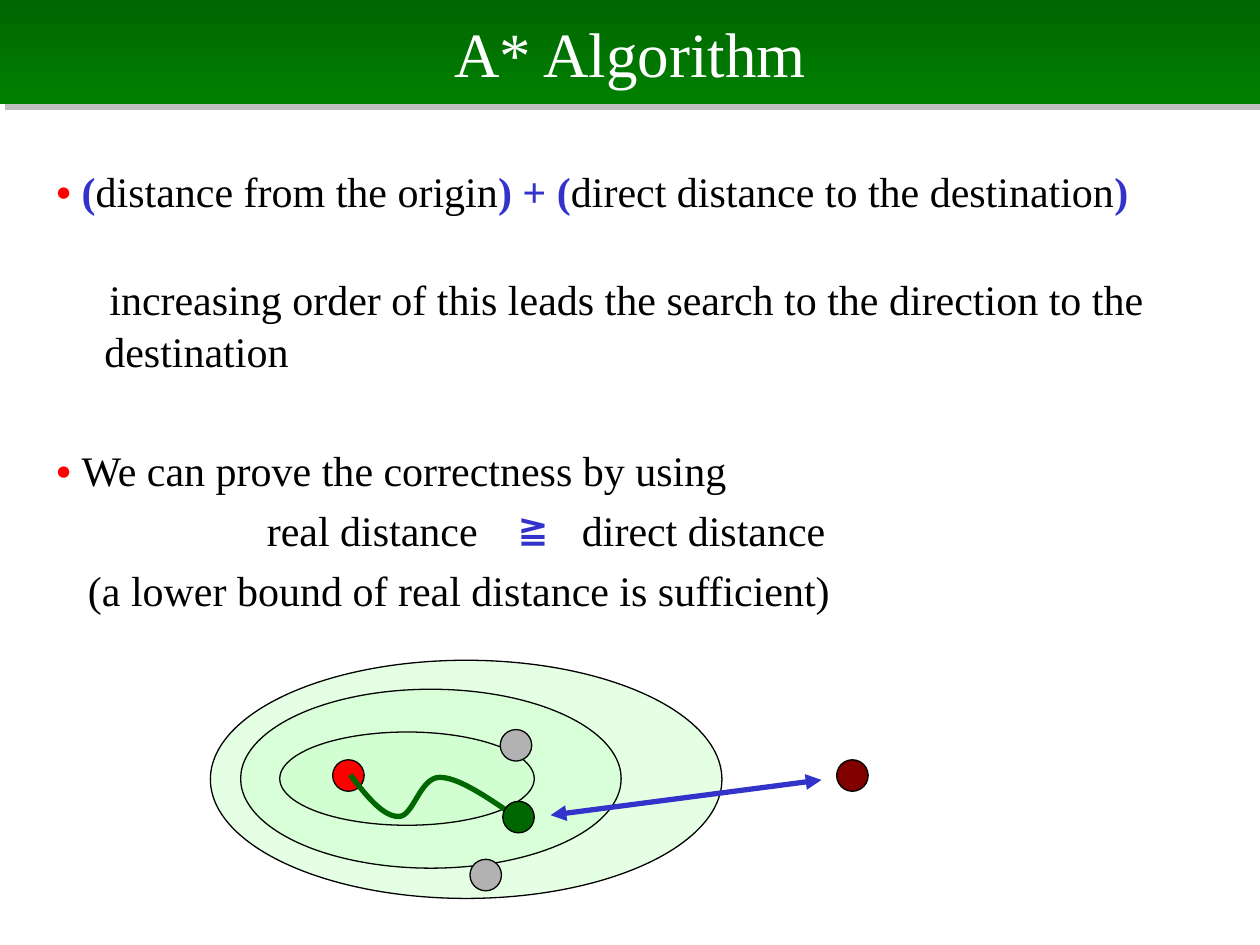
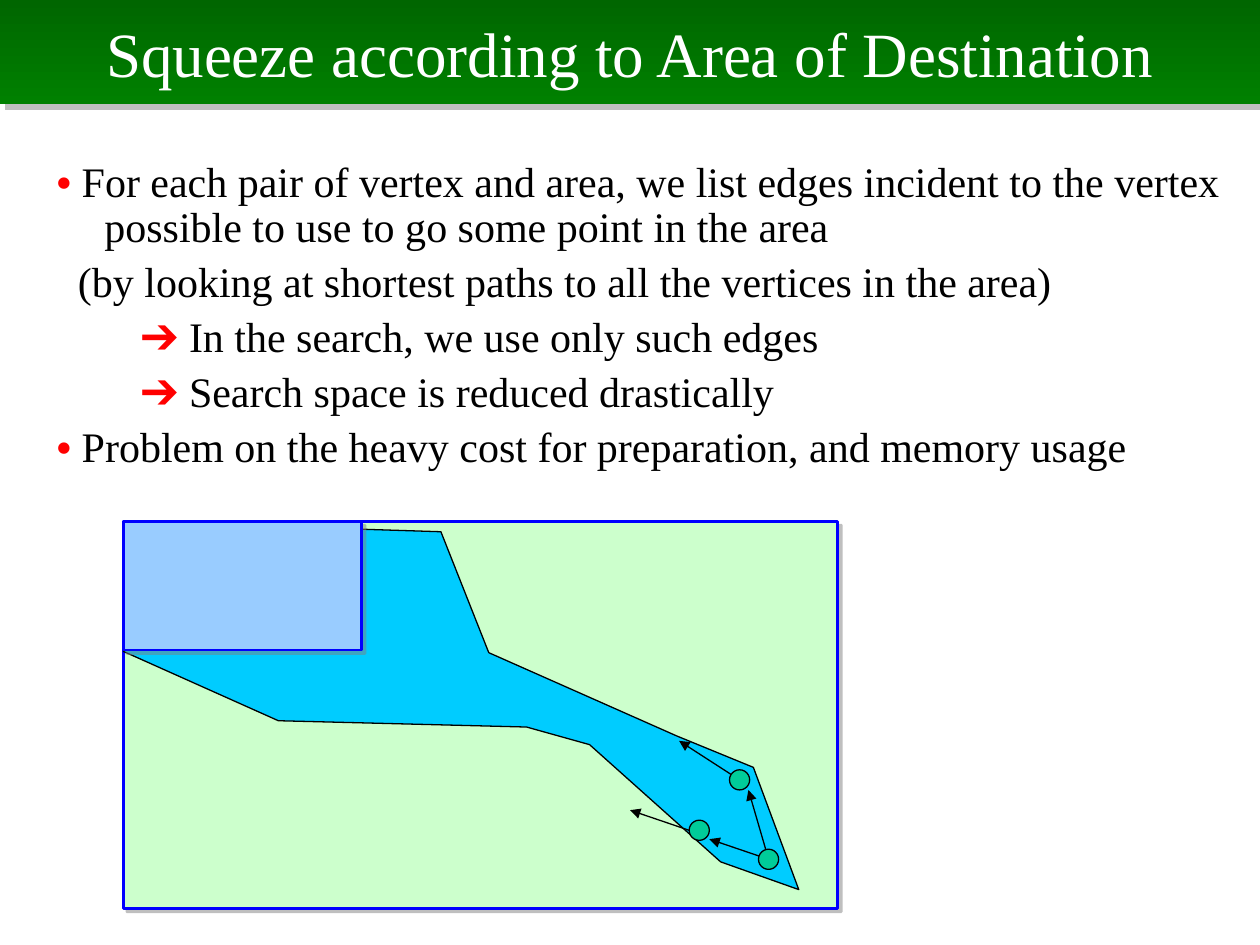
"""Build two slides on speeding up shortest path search."""
from dataclasses import dataclass

from lxml.etree import SubElement
from pptx import Presentation
from pptx.dml.color import RGBColor
from pptx.enum.shapes import MSO_CONNECTOR, MSO_SHAPE
from pptx.enum.text import MSO_ANCHOR, PP_ALIGN
from pptx.oxml.ns import qn
from pptx.util import Inches, Pt


@dataclass(frozen=True)
class Theme:
    font: str = "Times New Roman"
    title_size: float = 36
    body_size: float = 24
    thin: float = 0.75
    medium: float = 1.5
    thick: float = 3
    band_top: str = "006600"
    band_bottom: str = "008000"
    title: str = "FFFFFF"
    text: str = "000000"
    marker: str = "FF0000"
    accent: str = "3333CC"
    outline: str = "000000"
    frame: str = "0000FF"
    shadow: str = "808080"
    field: str = "CCFFCC"
    origin: str = "FF0000"
    destination: str = "800000"
    visited: str = "006600"
    waiting: str = "B2B2B2"
    corridor: str = "00CCFF"
    area: str = "99CCFF"
    vertex: str = "00CC99"


THEME = Theme()
SLIDE_SIZE = (10, 7.5)
BAND_HEIGHT = 0.83
HANG = 0.38
GAP = 5.5

ASTAR_TITLE = "A* Algorithm"
ASTAR_BODY_BOX = (0.35, 1.31, 8.9, 3.6)
ASTAR_BODY = [
    {"runs": [("• ", "marker"), ("(", "accent"), ("distance from the origin", "text"),
              (") + (", "accent"), ("direct distance to the destination", "text"),
              (")", "accent")], "spacing": 0.9},
    {"runs": [("increasing order of this leads the search to the direction to the destination",
               "text")], "first": 0.04, "before": 31.5, "spacing": 1.03},
    {"runs": [("• ", "marker"), ("We can prove the correctness by using", "text")],
     "before": 39.5},
    {"runs": [("real distance\t", "text"), ("≧\t", "accent"), ("direct distance", "text")],
     "left": 1.67, "first": 0, "tabs": (3.83, 4.58)},
    {"runs": [("(a lower bound of real distance is sufficient)", "text")],
     "left": 0.25, "first": 0},
]
SEARCH_RINGS = [(1.67, 5.24, 4.06, 1.89), (1.91, 5.47, 3.02, 1.42), (2.22, 5.81, 2.02, 0.74)]
ROUTE_START = (2.78, 6.15)
ROUTE_CURVE = [(2.91, 6.32), (3.04, 6.48), (3.16, 6.48),
               (3.28, 6.49), (3.33, 6.17), (3.49, 6.17),
               (3.64, 6.17), (3.87, 6.33), (4.09, 6.48)]
DIRECT_DISTANCE = ((4.37, 6.47), (6.52, 6.19))
NODE_SIZE = 0.25
END_NODES = [(2.64, 6.03, THEME.origin), (6.64, 6.03, THEME.destination)]
FRONT_NODES = [(3.99, 6.36, THEME.visited), (3.97, 5.79, THEME.waiting),
               (3.73, 6.82, THEME.waiting)]

SQUEEZE_TITLE = "Squeeze according to Area of Destination"
SQUEEZE_BODY_BOX = (0.35, 1.23, 9.45, 2.8)
SQUEEZE_BODY = [
    {"runs": [("• ", "marker"),
              ("For each pair of vertex and area, we list edges incident to the vertex "
               "possible to use to go some point in the area", "text")]},
    {"runs": [("(by looking at shortest paths to all the vertices in the area)", "text")],
     "left": 0.17, "first": 0},
    {"runs": [("➔ ", "marker"), ("In the search, we use only such edges", "text")],
     "left": 0.67, "first": 0},
    {"runs": [("➔ ", "marker"), ("Search space is reduced drastically", "text")],
     "left": 0.67, "first": 0},
    {"runs": [("• ", "marker"),
              ("Problem on the heavy cost for preparation, and memory usage", "text")]},
]
MAP_BOX = (0.98, 4.14, 5.67, 3.07)
AREA_BOX = (0.98, 4.14, 1.89, 1.02)
CORRIDOR = [(6.34, 7.06), (5.98, 6.09), (5.37, 5.84), (3.88, 5.18), (3.5, 4.22), (0.98, 4.14),
            (0.98, 5.17), (2.21, 5.72), (4.18, 5.77), (4.68, 5.91), (5.72, 6.84)]
EDGES = [((6.1, 6.82), (5.94, 6.27)), ((6.1, 6.82), (5.63, 6.66)),
         ((5.87, 6.19), (5.39, 5.88)), ((5.47, 6.59), (5, 6.43))]
VERTEX_SIZE = 0.16
VERTICES = [(6.02, 6.74), (5.79, 6.11), (5.47, 6.51)]


def color(value):
    return RGBColor.from_string(value)


def points(pairs):
    return [(Inches(x), Inches(y)) for x, y in pairs]


def set_line(shape, line_color, width):
    shape.line.color.rgb = color(line_color)
    shape.line.width = Pt(width)


def add_shadow(shape, distance):
    shape.shadow.inherit = False
    effects = shape._element.spPr.find(qn("a:effectLst"))
    shadow = SubElement(effects, qn("a:outerShdw"), dist=str(Pt(distance)), dir="2700000",
                        algn="ctr", rotWithShape="0")
    tint = SubElement(shadow, qn("a:srgbClr"), val=THEME.shadow)
    SubElement(tint, qn("a:alpha"), val="50000")


def add_preset(slide, kind, box, fill, line_color=THEME.outline, width=THEME.thin):
    shape = slide.shapes.add_shape(kind, *map(Inches, box))
    shape.shadow.inherit = False
    shape.fill.solid()
    shape.fill.fore_color.rgb = color(fill)
    set_line(shape, line_color, width)
    return shape


def add_dot(slide, left, top, size, fill):
    add_preset(slide, MSO_SHAPE.OVAL, (left, top, size, size), fill)


def add_panel(slide, box, fill):
    panel = add_preset(slide, MSO_SHAPE.RECTANGLE, box, fill, THEME.frame, THEME.medium)
    add_shadow(panel, 2.8)


def add_arrow(slide, start, end, line_color, width, ends=("tailEnd",)):
    (start_x, start_y), (end_x, end_y) = points((start, end))
    arrow = slide.shapes.add_connector(MSO_CONNECTOR.STRAIGHT, start_x, start_y, end_x, end_y)
    set_line(arrow, line_color, width)
    for end_name in ends:
        SubElement(arrow.line._get_or_add_ln(), qn(f"a:{end_name}"), type="triangle")
    SubElement(arrow._element.spPr, qn("a:effectLst"))


def add_outline(slide, start, corners, line_color, width, close):
    builder = slide.shapes.build_freeform(Inches(start[0]), Inches(start[1]))
    builder.add_line_segments(points(corners), close=close)
    shape = builder.convert_to_shape()
    shape.shadow.inherit = False
    set_line(shape, line_color, width)
    return shape


def add_curve(slide, start, controls, line_color, width):
    shape = add_outline(slide, start, controls, line_color, width, close=False)
    shape.fill.background()
    segments = list(shape._element.iter(qn("a:lnTo")))
    route = segments[0].getparent()
    for index in range(0, len(segments), 3):
        curve = SubElement(route, qn("a:cubicBezTo"))
        for segment in segments[index:index + 3]:
            curve.append(segment[0])
            route.remove(segment)


def style_run(run, size, run_color, bold=False):
    run.font.name = THEME.font
    run.font.size = Pt(size)
    run.font.bold = bold
    run.font.color.rgb = color(run_color)


def add_title(slide, title):
    band = slide.shapes.add_shape(MSO_SHAPE.RECTANGLE, 0, 0, Inches(SLIDE_SIZE[0]),
                                  Inches(BAND_HEIGHT))
    band.fill.gradient()
    band.fill.gradient_angle = 270
    for stop, stop_color in zip(band.fill.gradient_stops, (THEME.band_top, THEME.band_bottom)):
        stop.color.rgb = color(stop_color)
    band.line.fill.background()
    add_shadow(band, 4.2)
    band.text_frame.text = title
    band.text_frame.vertical_anchor = MSO_ANCHOR.MIDDLE
    paragraph = band.text_frame.paragraphs[0]
    paragraph.alignment = PP_ALIGN.CENTER
    style_run(paragraph.runs[0], THEME.title_size, THEME.title)


def add_body(slide, box, content, spacing):
    text_frame = slide.shapes.add_textbox(*map(Inches, box)).text_frame
    text_frame.word_wrap = True
    for index, item in enumerate(content):
        paragraph = text_frame.add_paragraph() if index else text_frame.paragraphs[0]
        paragraph.line_spacing = item.get("spacing", spacing)
        paragraph.space_before = Pt(item.get("before", GAP) if index else 0)
        properties = paragraph._p.get_or_add_pPr()
        properties.set("marL", str(Inches(item.get("left", HANG))))
        properties.set("indent", str(Inches(item.get("first", -HANG))))
        if "tabs" in item:
            tab_list = SubElement(properties, qn("a:tabLst"))
            for position in item["tabs"]:
                SubElement(tab_list, qn("a:tab"), pos=str(Inches(position)), algn="l")
        for text, role in item["runs"]:
            run = paragraph.add_run()
            run.text = text
            style_run(run, THEME.body_size, getattr(THEME, role), role != "text")


def build_astar(slide):
    add_title(slide, ASTAR_TITLE)
    add_body(slide, ASTAR_BODY_BOX, ASTAR_BODY, 1.0)
    for box in SEARCH_RINGS:
        ring = add_preset(slide, MSO_SHAPE.OVAL, box, THEME.field)
        tint = ring._element.spPr.find(qn("a:solidFill"))[0]
        SubElement(tint, qn("a:alpha"), val="50000")
    for left, top, fill in END_NODES:
        add_dot(slide, left, top, NODE_SIZE, fill)
    add_curve(slide, ROUTE_START, ROUTE_CURVE, THEME.visited, THEME.thick)
    add_arrow(slide, *DIRECT_DISTANCE, THEME.accent, THEME.thick, ("headEnd", "tailEnd"))
    for left, top, fill in FRONT_NODES:
        add_dot(slide, left, top, NODE_SIZE, fill)


def build_squeeze(slide):
    add_title(slide, SQUEEZE_TITLE)
    add_body(slide, SQUEEZE_BODY_BOX, SQUEEZE_BODY, 0.9)
    add_panel(slide, MAP_BOX, THEME.field)
    corridor = add_outline(slide, CORRIDOR[0], CORRIDOR[1:], THEME.outline, THEME.thin, close=True)
    corridor.fill.solid()
    corridor.fill.fore_color.rgb = color(THEME.corridor)
    add_panel(slide, AREA_BOX, THEME.area)
    for start, end in EDGES:
        add_arrow(slide, start, end, THEME.outline, THEME.thin)
    for left, top in VERTICES:
        add_dot(slide, left, top, VERTEX_SIZE, THEME.vertex)


def main():
    presentation = Presentation()
    presentation.slide_width, presentation.slide_height = map(Inches, SLIDE_SIZE)
    for build in (build_astar, build_squeeze):
        build(presentation.slides.add_slide(presentation.slide_layouts[6]))
    presentation.save("out.pptx")


if __name__ == "__main__":
    main()
